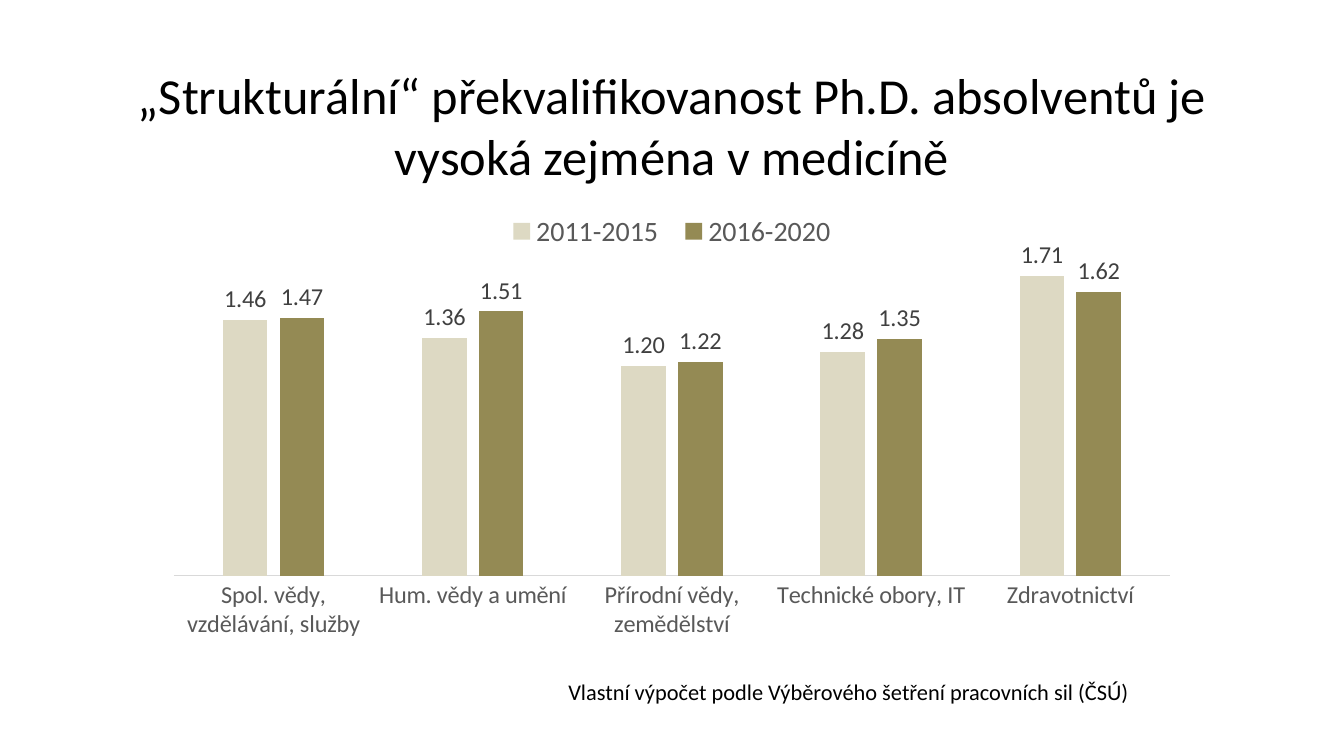
from dataclasses import dataclass

from lxml import etree
from pptx import Presentation
from pptx.chart.data import CategoryChartData
from pptx.dml.color import RGBColor
from pptx.enum.chart import XL_CHART_TYPE, XL_LABEL_POSITION, XL_LEGEND_POSITION, XL_TICK_MARK
from pptx.enum.text import MSO_ANCHOR, PP_ALIGN
from pptx.oxml.ns import qn
from pptx.util import Inches, Pt

COLUMN_CLUSTERED = XL_CHART_TYPE.COLUMN_CLUSTERED
LABEL_OUTSIDE = XL_LABEL_POSITION.OUTSIDE_END
LEGEND_TOP = XL_LEGEND_POSITION.TOP
NO_TICK = XL_TICK_MARK.NONE
MIDDLE, TOP = MSO_ANCHOR.MIDDLE, MSO_ANCHOR.TOP
CENTER, LEFT = PP_ALIGN.CENTER, PP_ALIGN.LEFT

SLIDE_WIDTH = 10
SLIDE_HEIGHT = SLIDE_WIDTH * 9 / 16


@dataclass(frozen=True)
class Theme:
    font: str = "Calibri"
    text: str = "000000"
    axis_text: str = "595959"
    label_text: str = "404040"
    axis_line: str = "D9D9D9"
    series: tuple = ("DDD9C3", "948A54")
    title_size: float = 27
    legend_size: float = 15
    chart_size: float = 13
    source_size: float = 12


# Content
TITLE = "„Strukturální“ překvalifikovanost Ph.D. absolventů je vysoká zejména v medicíně"
SOURCE = "Vlastní výpočet podle Výběrového šetření pracovních sil (ČSÚ)"
FIELDS = [
    "Spol. vědy, vzdělávání, služby",
    "Hum. vědy a umění",
    "Přírodní vědy, zemědělství",
    "Technické obory, IT",
    "Zdravotnictví",
]
PERIODS = {
    "2011-2015": (1.46, 1.36, 1.20, 1.28, 1.71),
    "2016-2020": (1.47, 1.51, 1.22, 1.35, 1.62),
}


def set_layout(element, index, **settings):
    """Place a chart part by fractions of the chart's size."""
    layout = element.find(qn("c:layout"))
    if layout is None:
        layout = etree.Element(qn("c:layout"))
        element.insert(index, layout)
    manual = etree.SubElement(layout, qn("c:manualLayout"))
    for tag, value in settings.items():
        etree.SubElement(manual, qn(f"c:{tag}")).set("val", str(value))


class SlideBuilder:
    def __init__(self, slide, theme):
        self.slide = slide
        self.theme = theme

    def format_font(self, font, size, color):
        font.name = self.theme.font
        font.size = Pt(size)
        font.bold = False
        font.color.rgb = RGBColor.from_string(color)

    def add_text(self, text, left, top, width, height, *, size, align=LEFT, anchor=TOP):
        box = self.slide.shapes.add_textbox(
            Inches(left), Inches(top), Inches(width), Inches(height))
        frame = box.text_frame
        frame.word_wrap = True
        frame.vertical_anchor = anchor
        paragraph = frame.paragraphs[0]
        paragraph.alignment = align
        run = paragraph.add_run()
        run.text = text
        self.format_font(run.font, size, self.theme.text)

    def add_column_chart(self, categories, series_values, left, top, width, height):
        theme = self.theme
        data = CategoryChartData(number_format="0.00")
        data.categories = categories
        for name, values in series_values.items():
            data.add_series(name, values)
        chart = self.slide.shapes.add_chart(
            COLUMN_CLUSTERED, Inches(left), Inches(top), Inches(width), Inches(height), data).chart
        chart.has_title = False
        self.format_font(chart.font, 10, theme.text)

        # Legend
        chart.has_legend = True
        chart.legend.position = LEGEND_TOP
        chart.legend.include_in_layout = False
        self.format_font(chart.legend.font, theme.legend_size, theme.axis_text)

        # Axes
        value_axis = chart.value_axis
        value_axis.minimum_scale = 0
        value_axis.maximum_scale = 1.8
        value_axis.has_major_gridlines = False
        value_axis.visible = False
        category_axis = chart.category_axis
        category_axis.major_tick_mark = NO_TICK
        category_axis.minor_tick_mark = NO_TICK
        category_axis.format.line.color.rgb = RGBColor.from_string(theme.axis_line)
        category_axis.format.line.width = Pt(0.75)
        self.format_font(category_axis.tick_labels.font, theme.chart_size, theme.axis_text)

        # Columns and their labels
        plot = chart.plots[0]
        plot.gap_width = 219
        plot.overlap = -27
        plot.vary_by_categories = False
        for series, color in zip(plot.series, theme.series):
            series.format.fill.solid()
            series.format.fill.fore_color.rgb = RGBColor.from_string(color)
            labels = series.data_labels
            labels.show_value = True
            labels.number_format = "0.00"
            labels.number_format_is_linked = False
            labels.position = LABEL_OUTSIDE
            self.format_font(labels.font, theme.chart_size, theme.label_text)

        # Places of the plot area and the legend
        set_layout(chart.element.find(".//" + qn("c:plotArea")), 0, layoutTarget="inner",
                   xMode="edge", yMode="edge", x=0.02, y=0.14, w=0.96, h=0.7)
        set_layout(chart.element.find(".//" + qn("c:legend")), 1,
                   xMode="edge", yMode="edge", x=0.33, y=0.03, w=0.34, h=0.09)


def main():
    presentation = Presentation()
    presentation.slide_width = Inches(SLIDE_WIDTH)
    presentation.slide_height = Inches(SLIDE_HEIGHT)
    slide = presentation.slides.add_slide(presentation.slide_layouts[6])
    theme = Theme()
    builder = SlideBuilder(slide, theme)

    # Title, chart and source line
    builder.add_text(TITLE, 0.5, 0.46, 9, 0.94,
                     size=theme.title_size, align=CENTER, anchor=MIDDLE)
    builder.add_column_chart(FIELDS, PERIODS, 1.14, 1.47, 7.72, 3.35)
    builder.add_text(SOURCE, 4.13, 5, 4.91, 0.3, size=theme.source_size)

    presentation.save("out.pptx")


if __name__ == "__main__":
    main()
